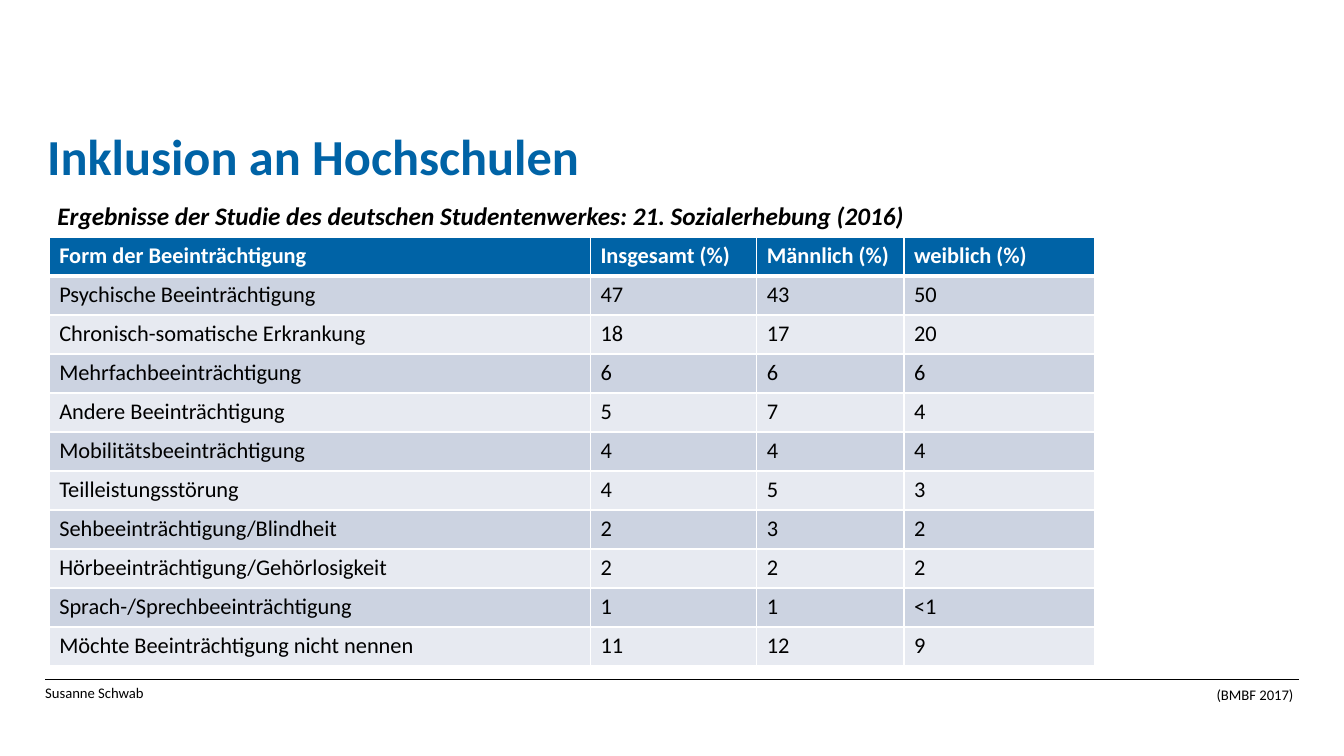
"""Build the slide on impairments among students as a table with title and footer."""
from lxml.etree import SubElement
from pptx import Presentation
from pptx.dml.color import RGBColor
from pptx.enum.shapes import MSO_CONNECTOR
from pptx.enum.text import MSO_ANCHOR
from pptx.oxml.ns import qn
from pptx.util import Cm, Pt

COLORS = {
    "blue": "0063A6",
    "black": "000000",
    "white": "FFFFFF",
    "dark_band": "CCD3E1",
    "light_band": "E7EAF1",
}
FONT = "Calibri"
COLUMN_WIDTHS = (13.64, 4.19, 3.71, 4.8)
ROWS = (
    ("Form der Beeinträchtigung", "Insgesamt (%)", "Männlich (%)", "weiblich (%)"),
    ("Psychische Beeinträchtigung", "47", "43", "50"),
    ("Chronisch-somatische Erkrankung", "18", "17", "20"),
    ("Mehrfachbeeinträchtigung", "6", "6", "6"),
    ("Andere Beeinträchtigung", "5", "7", "4"),
    ("Mobilitätsbeeinträchtigung", "4", "4", "4"),
    ("Teilleistungsstörung", "4", "5", "3"),
    ("Sehbeeinträchtigung/Blindheit", "2", "3", "2"),
    ("Hörbeeinträchtigung/Gehörlosigkeit", "2", "2", "2"),
    ("Sprach-/Sprechbeeinträchtigung", "1", "1", "<1"),
    ("Möchte Beeinträchtigung nicht nennen", "11", "12", "9"),
)


def color(name):
    """Return the named colour."""
    return RGBColor.from_string(COLORS[name])


def add_span(para, text, size, tint="black", bold=False, italic=False):
    """Append a formatted run to a paragraph."""
    span = para.add_run()
    span.text = text
    font = span.font
    font.name, font.size, font.bold, font.italic = FONT, Pt(size), bold, italic
    font.color.rgb = color(tint)


def add_text(page, place, text, size, anchor=MSO_ANCHOR.TOP, spacing=1.0, **style):
    """Add a text box without insets, placed in centimetres."""
    box = page.shapes.add_textbox(*(Cm(length) for length in place))
    frame = box.text_frame
    frame.word_wrap = True
    frame.vertical_anchor = anchor
    frame.margin_left = frame.margin_top = frame.margin_right = frame.margin_bottom = 0
    para = frame.paragraphs[0]
    para.line_spacing = spacing
    add_span(para, text, size, **style)


def set_borders(cell, top, bottom):
    """Draw white borders around a cell, with widths in points."""
    properties = cell._tc.get_or_add_tcPr()
    for side, width in (("L", 1), ("R", 1), ("T", top), ("B", bottom)):
        line = SubElement(properties, qn(f"a:ln{side}"), w=str(Pt(width)))
        fill = SubElement(line, qn("a:solidFill"))
        SubElement(fill, qn("a:srgbClr"), val=COLORS["white"])


def add_results_table(page):
    """Add the table with a blue header and banded rows."""
    height = Cm(10.82)
    frame = page.shapes.add_table(
        len(ROWS), len(COLUMN_WIDTHS), Cm(1.24), Cm(5.97), Cm(sum(COLUMN_WIDTHS)), height
    )
    table = frame.table
    for column, width in zip(table.columns, COLUMN_WIDTHS):
        column.width = Cm(width)
    for row_index, values in enumerate(ROWS):
        table.rows[row_index].height = height // len(ROWS)
        header = row_index == 0
        band = "blue" if header else "dark_band" if row_index % 2 else "light_band"
        for column_index, value in enumerate(values):
            cell = table.cell(row_index, column_index)
            set_borders(cell, 3 if row_index == 1 else 1, 3 if header else 1)
            cell.fill.solid()
            cell.fill.fore_color.rgb = color(band)
            tint = "white" if header else "black"
            add_span(cell.text_frame.paragraphs[0], value, 16, tint, bold=header)


def add_footer_line(page):
    """Add the thin rule above the footer."""
    line = page.shapes.add_connector(
        MSO_CONNECTOR.STRAIGHT, Cm(1.14), Cm(17.12), Cm(32.74), Cm(17.12)
    )
    line.line.color.rgb = color("black")
    line.line.width = Pt(0.75)
    SubElement(line._element.spPr, qn("a:effectLst"))


def main():
    """Assemble and save the deck."""
    deck = Presentation()
    deck.slide_width, deck.slide_height = Cm(33.87), Cm(19.05)
    page = deck.slides.add_slide(deck.slide_layouts[6])
    add_footer_line(page)
    add_text(page, (1.19, 2.41, 23.7, 2.29), "Inklusion an Hochschulen", 36,
             anchor=MSO_ANCHOR.BOTTOM, spacing=0.9, tint="blue", bold=True)
    add_results_table(page)
    add_text(page, (1.45, 5.11, 23.7, 0.86),
             "Ergebnisse der Studie des deutschen Studentenwerkes: 21. Sozialerhebung (2016)",
             18, spacing=0.95, bold=True, italic=True)
    add_text(page, (30.66, 17.27, 2.11, 1.02), "(BMBF 2017)", 10.5)
    add_text(page, (1.14, 17.22, 21.67, 1.02), "Susanne Schwab", 10.5)
    deck.save("out.pptx")


if __name__ == "__main__":
    main()
